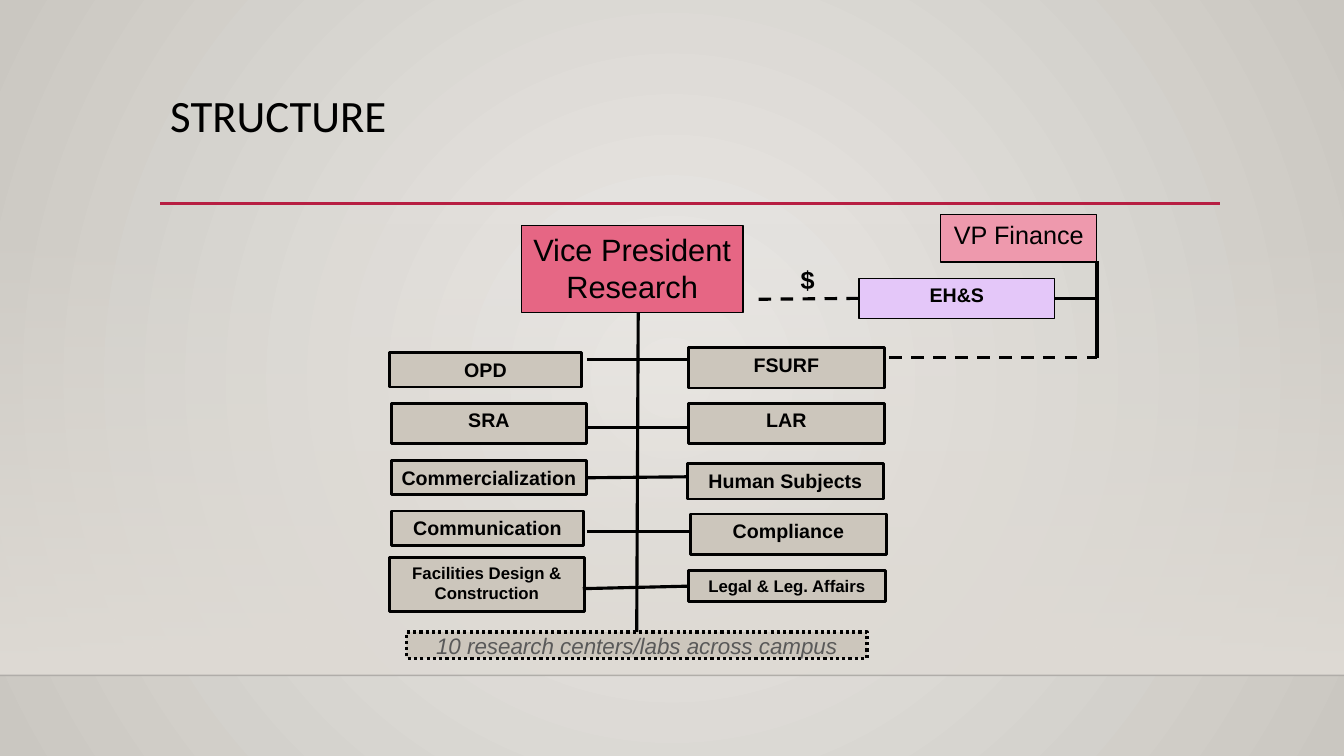
"""Build the STRUCTURE slide: a research office organisation chart."""
from lxml.etree import SubElement
from pptx import Presentation
from pptx.dml.color import RGBColor
from pptx.enum.dml import MSO_LINE as DASH
from pptx.enum.shapes import MSO_CONNECTOR as CONN, MSO_SHAPE as SHAPE
from pptx.enum.text import MSO_ANCHOR as ANCHOR, PP_ALIGN as ALIGN
from pptx.oxml.ns import qn
from pptx.util import Inches, Pt

prs = Presentation()
prs.slide_width, prs.slide_height = Inches(13.33), Inches(7.5)
COLS, ROWS = 133.3, 75
CW, RH = prs.slide_width / COLS, prs.slide_height / ROWS
s = prs.slides.add_slide(prs.slide_layouts[6])
rgb = RGBColor.from_string


def add_line(x1, y1, x2, y2, color="000000", width=2.25, dash=None):
    c = s.shapes.add_connector(CONN.STRAIGHT, round(x1 * CW), round(y1 * RH),
                               round(x2 * CW), round(y2 * RH))
    c.line.color.rgb, c.line.width = rgb(color), Pt(width)
    if dash:
        c.line.dash_style = dash
    SubElement(c._element.spPr, qn("a:effectLst"))
    return c


def add_box(text, x, y, w, h, fill=None, line=None, size=14, bold=True, font="Arial"):
    sp = s.shapes.add_shape(SHAPE.RECTANGLE, round(x * CW), round(y * RH),
                            round(w * CW), round(h * RH))
    sp.shadow.inherit = False
    if fill:
        sp.fill.solid()
        sp.fill.fore_color.rgb = rgb(fill)
    else:
        sp.fill.background()
    if line:
        sp.line.color.rgb, sp.line.width = rgb("000000"), Pt(line)
    else:
        sp.line.fill.background()
    tf = sp.text_frame
    tf.word_wrap, tf.vertical_anchor = True, ANCHOR.TOP
    tf.margin_left = tf.margin_right = Inches(0.08)
    tf.text = text
    p = tf.paragraphs[0]
    p.alignment = ALIGN.CENTER
    for r in p.runs:
        r.font.name, r.font.size, r.font.bold = font, Pt(size), bold
        r.font.color.rgb = rgb("000000")
    return sp


band = add_box("", 0, 22.1, COLS, 44.9)
for fill, colors in ((s.background.fill, ("ECEAE7", "CAC7C1")),
                     (band.fill, ("DFDBD5", "DFDBD5"))):
    fill.gradient()
    for stop, color in zip(fill.gradient_stops, colors):
        stop.color.rgb = rgb(color)
band.fill.gradient_angle = 270
clear = next(band._element.iter(qn("a:srgbClr")))
SubElement(clear, qn("a:alpha"), val="0")

grad = next(s._element.iter(qn("a:gradFill")))
grad.remove(grad.find(qn("a:lin")))
circle = SubElement(grad, qn("a:path"))
circle.set("path", "circle")
SubElement(circle, qn("a:fillToRect"), l="50000", t="50000", r="50000", b="50000")

floor = add_line(0, 67, COLS, 67, "000001", 1)
SubElement(next(floor._element.iter(qn("a:srgbClr"))), qn("a:alpha"), val="20000")
add_line(15.9, 20.2, 121, 20.2, "B71E42", 2.5)

title = add_box("STRUCTURE", 15.9, 8.8, 105, 11.5, size=32, bold=False, font="Calibri")
title.text_frame.margin_left = Inches(0.1)
title.text_frame.paragraphs[0].alignment = ALIGN.LEFT
title.text_frame.paragraphs[0].line_spacing = 0.9

units = {}
for name, x, y, w, h, size in (
        ("OPD", 38.6, 35, 19.1, 3.4, 14),
        ("SRA", 38.8, 40, 19.4, 4, 14),
        ("Commercialization", 38.8, 45.7, 19.4, 3.4, 14),
        ("Communication", 38.8, 50.7, 19.1, 3.4, 14),
        ("Facilities Design & Construction", 38.6, 55.3, 19.4, 5.4, 12),
        ("FSURF", 68.3, 34.5, 19.4, 4, 14),
        ("LAR", 68.3, 40, 19.4, 4, 14),
        ("Human Subjects", 68.2, 46, 19.4, 3.5, 14),
        ("Compliance", 68.5, 51, 19.4, 4, 14),
        ("Legal & Leg. Affairs", 68.3, 56.6, 19.5, 3.1, 12)):
    units[name] = add_box(name, x, y, w, h, "CCC6BC", 2, size)

add_box("Vice President Research", 51.7, 22.4, 22, 8.6, "E66684", 0.75, 22, False)
add_box("VP Finance", 93.3, 21.3, 15.5, 4.7, "EE99AD", 0.75, 18, False)
safety = add_box("EH&S", 85.2, 27.6, 19.4, 4, "E4C7F9", 0.75)
add_box("$", 78.4, 25.7, 3.4, 4.6, size=18)

labs = add_box("10 research centers/labs across campus", 40.3, 62.7, 45.7, 2.6,
               "CCC6BC", 2.25, 16, False)
labs.line.dash_style = DASH.ROUND_DOT
labs.text_frame.vertical_anchor = ANCHOR.MIDDLE
labs.text_frame.word_wrap = False
labs_font = labs.text_frame.paragraphs[0].runs[0].font
labs_font.italic, labs_font.color.rgb = True, rgb("595959")

add_line(63.3, 31, 63.2, 62.7).end_connect(labs, 0)
add_line(108.8, 25.9, 108.8, 35.5)
add_line(88.2, 35.5, 108.8, 35.5, dash=DASH.DASH)
add_line(85.2, 29.6, 74.4, 29.7, dash=DASH.DASH).begin_connect(safety, 1)
add_line(104.6, 29.6, 108.8, 29.6).begin_connect(safety, 3)

rungs = [add_line(58.2, y, 68.3, y) for y in (35.7, 42.4, 47.3, 52.7)]
rungs[2].begin_connect(units["Commercialization"], 3)
add_line(57.8, 58.4, 68.3, 58.2).end_connect(units["Legal & Leg. Affairs"], 1)

prs.save("out.pptx")
